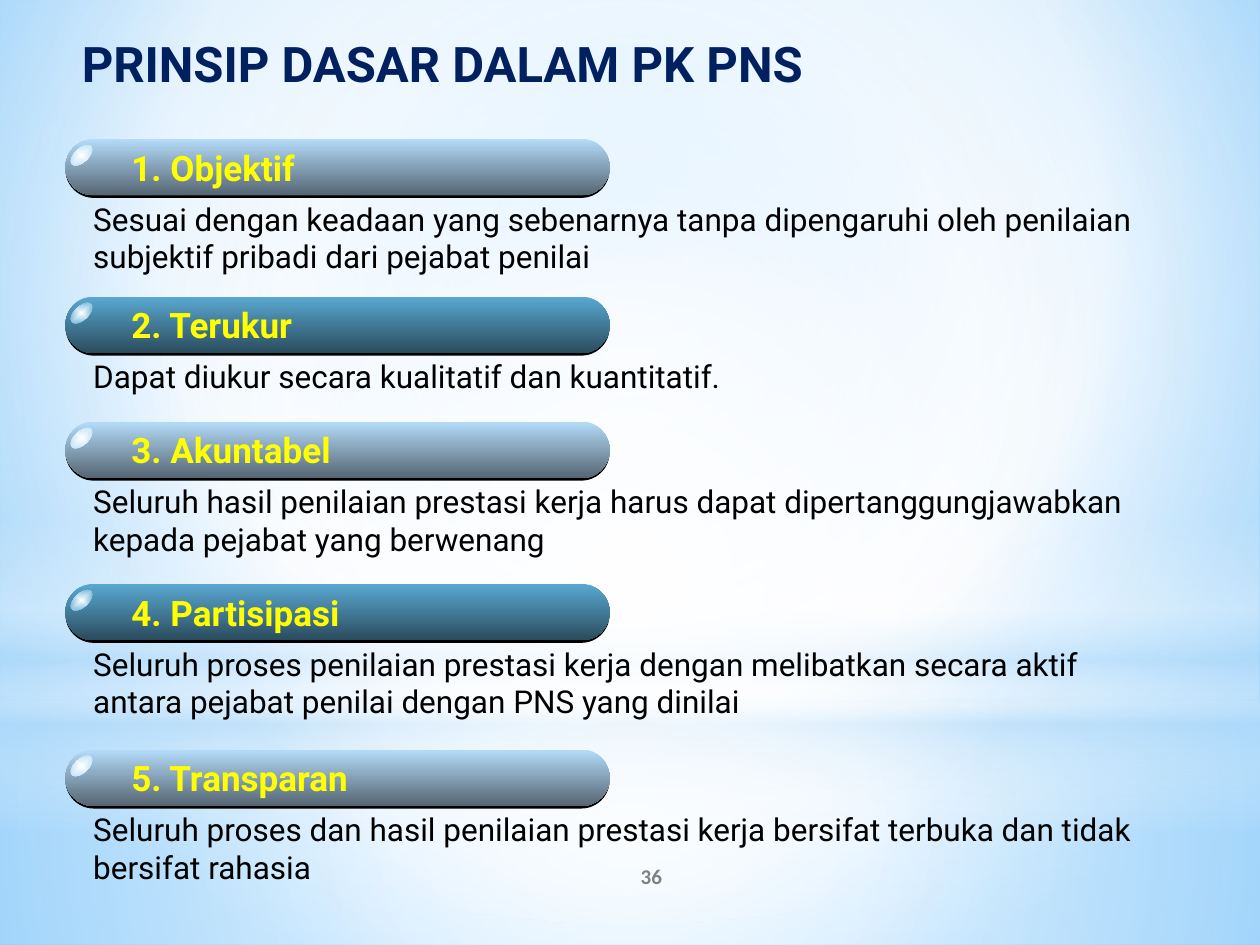
from lxml.etree import SubElement
from pptx import Presentation
from pptx.dml.color import RGBColor
from pptx.enum.shapes import MSO_SHAPE
from pptx.enum.text import MSO_ANCHOR, PP_ALIGN
from pptx.oxml.ns import qn
from pptx.util import Cm, Pt

WHITE = RGBColor(0xFF, 0xFF, 0xFF)
BLACK = RGBColor(0, 0, 0)
NAVY = RGBColor(0x00, 0x20, 0x60)
YELLOW = RGBColor(0xFF, 0xFF, 0x00)
GREY = RGBColor(0x80, 0x80, 0x80)
PALE = RGBColor(0xB4, 0xDC, 0xFA)
PALE_DARK = RGBColor(0x55, 0x65, 0x72)
BLUE = RGBColor(0x59, 0xA8, 0xD1)
BLUE_DARK = RGBColor(0x2B, 0x4C, 0x5E)
SKY = RGBColor(0x9E, 0xD5, 0xFF)
SKY_DARK = RGBColor(0x5B, 0xB9, 0xFF)

TITLE = "PRINSIP DASAR DALAM PK PNS"
PAGE = "36"
# Heading, explanation, top of the bar in cm, number of text lines
PRINCIPLES = [
    ("1. Objektif", "Sesuai dengan keadaan yang sebenarnya tanpa dipengaruhi oleh "
     "penilaian subjektif pribadi dari pejabat penilai", 2.8, 2),
    ("2. Terukur", "Dapat diukur secara kualitatif dan kuantitatif.", 5.98, 1),
    ("3. Akuntabel", "Seluruh hasil penilaian prestasi kerja harus dapat "
     "dipertanggungjawabkan kepada pejabat yang berwenang", 8.5, 2),
    ("4. Partisipasi", "Seluruh proses penilaian prestasi kerja dengan melibatkan "
     "secara aktif antara pejabat penilai dengan PNS yang dinilai", 11.77, 2),
    ("5. Transparan", "Seluruh proses dan hasil penilaian prestasi kerja bersifat "
     "terbuka dan tidak bersifat rahasia", 15.11, 2),
]
BAR_COLOURS = [(PALE, PALE_DARK), (BLUE, BLUE_DARK)]

# Backdrop layers: shape, box in cm, stops (percent, colour, opacity), focus
CENTRE = (50, 50, 50, 50)
BACKDROP = [
    (MSO_SHAPE.RECTANGLE, (0, 14.17, 25.4, 4.88),
     [(0, WHITE, 91), (37, WHITE, 76), (100, PALE, 79)], CENTRE),
    (MSO_SHAPE.RECTANGLE, (0, 0, 25.4, 14.17),
     [(0, WHITE, 89), (48, WHITE, 62), (100, PALE, 79)], CENTRE),
    (MSO_SHAPE.RECTANGLE, (0, 10.46, 25.4, 6.35),
     [(0, WHITE, 0), (29, WHITE, 30), (45, PALE, 40), (55, WHITE, 26),
      (65, PALE, 60), (100, WHITE, 0)], None),
    (MSO_SHAPE.OVAL, (0, 4.45, 25.4, 14.17),
     [(0, WHITE, 100), (56, WHITE, 0)], CENTRE),
]


def set_gradient(fill, element, stops, focus=None, kind="circle"):
    """Radial gradient around the focus, or top to bottom without one."""
    fill.solid()
    solid = element.find(".//" + qn("a:solidFill"))
    grad = solid.makeelement(qn("a:gradFill"), {"rotWithShape": "1"})
    gs_list = SubElement(grad, qn("a:gsLst"))
    for pos, colour, opacity in stops:
        gs = SubElement(gs_list, qn("a:gs"), pos=str(pos * 1000))
        clr = SubElement(gs, qn("a:srgbClr"), val=str(colour))
        if opacity < 100:
            SubElement(clr, qn("a:alpha"), val=str(opacity * 1000))
    if focus:
        shade = SubElement(grad, qn("a:path"), {"path": kind})
        edges = {k: str(v * 1000) for k, v in zip("ltrb", focus)}
        SubElement(shade, qn("a:fillToRect"), edges)
    else:
        SubElement(grad, qn("a:lin"), ang="5400000", scaled="0")
    solid.getparent().replace(solid, grad)


def add_shape(shapes, kind, box, stops=None, focus=None, path_kind="circle"):
    s = shapes.add_shape(kind, *map(Cm, box))
    s.shadow.inherit = False
    s.line.fill.background()
    if stops:
        set_gradient(s.fill, s._element.spPr, stops, focus, path_kind)
    else:
        s.fill.solid()
        s.fill.fore_color.rgb = BLACK
    if kind == MSO_SHAPE.ROUNDED_RECTANGLE:
        s.adjustments[0] = 0.5
    return s


def add_text(shapes, box, text, size, colour, bold=False, font="Roboto",
             anchor=MSO_ANCHOR.TOP, align=PP_ALIGN.LEFT):
    tf = shapes.add_textbox(*map(Cm, box)).text_frame
    tf.word_wrap = True
    tf.vertical_anchor = anchor
    tf.text = text
    p = tf.paragraphs[0]
    p.alignment = align
    f = p.runs[0].font
    f.name, f.size, f.bold, f.color.rgb = font, Pt(size), bold, colour


def add_bar(slide, heading, top, colours):
    left, width, height = 1.32, 10.97, 1.14
    light, dark = colours
    shapes = slide.shapes.add_group_shape().shapes
    pill = MSO_SHAPE.ROUNDED_RECTANGLE
    add_shape(shapes, pill, (left, top + 0.05, width, height))
    add_shape(shapes, pill, (left, top, width, height),
              [(0, light, 100), (100, dark, 100)])
    gloss = add_shape(shapes, MSO_SHAPE.OVAL, (left + 0.06, top + 0.19, 0.53, 0.28),
                      [(0, WHITE, 100), (100, light, 100)], CENTRE, "shape")
    gloss.rotation = 317.2
    add_text(shapes, (left + 1.08, top + 0.19, 8.6, 0.76), heading, 20, YELLOW,
             bold=True, anchor=MSO_ANCHOR.MIDDLE)


prs = Presentation()
prs.slide_width, prs.slide_height = Cm(25.4), Cm(19.05)
slide = prs.slides.add_slide(prs.slide_layouts[6])

# Background
set_gradient(slide.background.fill, slide._element,
             [(0, SKY, 100), (60, WHITE, 100), (100, SKY_DARK, 100)],
             (20, 10, 20, 60))
for kind, box, stops, focus in BACKDROP:
    add_shape(slide.shapes, kind, box, stops, focus)

# Title
add_text(slide.shapes, (1.4, 0.56, 21.8, 1.7), TITLE, 28, NAVY, bold=True)

# Principles, with alternating bar colours
for i, (heading, body, top, lines) in enumerate(PRINCIPLES):
    add_bar(slide, heading, top, BAR_COLOURS[i % 2])
    add_text(slide.shapes, (1.63, top + 1.1, 22.28, 0.25 + 0.77 * lines),
             body, 18, BLACK)

# Page number
add_text(slide.shapes, (10.59, 17.15, 5.08, 1.01), PAGE, 12, GREY, bold=True,
         font="Calibri", anchor=MSO_ANCHOR.MIDDLE, align=PP_ALIGN.CENTER)

prs.save("out.pptx")
